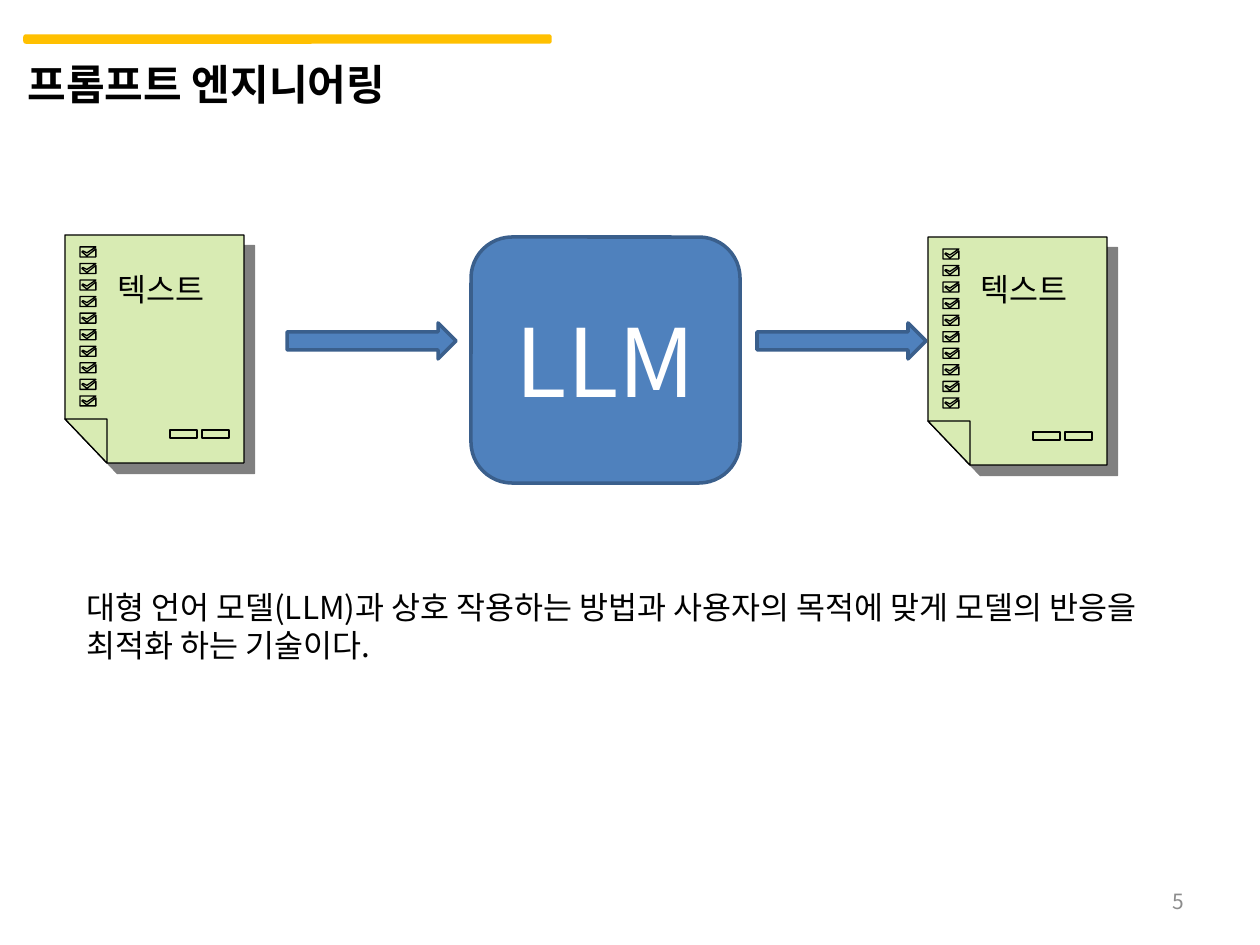
from copy import deepcopy

from lxml import etree
from pptx import Presentation
from pptx.dml.color import RGBColor
from pptx.enum.shapes import MSO_SHAPE
from pptx.enum.text import MSO_ANCHOR, MSO_AUTO_SIZE, PP_ALIGN
from pptx.oxml.ns import qn
from pptx.util import Pt

ROUNDED, ARROW = MSO_SHAPE.ROUNDED_RECTANGLE, MSO_SHAPE.RIGHT_ARROW
TOP, MIDDLE = MSO_ANCHOR.TOP, MSO_ANCHOR.MIDDLE
LEFT, CENTER, RIGHT = PP_ALIGN.LEFT, PP_ALIGN.CENTER, PP_ALIGN.RIGHT

SCALE = 914400 / 126  # EMU per px
FONT = "Noto Sans CJK KR"
BLACK = RGBColor(0x00, 0x00, 0x00)
WHITE = RGBColor(0xFF, 0xFF, 0xFF)
GRAY = RGBColor(0x8C, 0x8C, 0x8C)
GOLD = RGBColor(0xFF, 0xC0, 0x00)
BLUE = RGBColor(0x4F, 0x81, 0xBD)
NAVY = RGBColor(0x3A, 0x5F, 0x8C)
GREEN = RGBColor(0xD8, 0xEB, 0xB3)

# Content: positions are left, top, width, height in px
TITLE = ("프롬프트 엔지니어링", (15, 52, 546, 63))
MODEL = ("LLM", (471, 237, 269, 246))
TEXTS = [
    ("텍스트", (105, 264, 139, 51), {"size": Pt(18)}, LEFT, TOP),
    ("텍스트", (968, 264, 139, 51), {"size": Pt(18)}, LEFT, TOP),
    ("대형 언어 모델(LLM)과 상호 작용하는 방법과 사용자의 목적에 맞게 "
     "모델의 반응을 최적화 하는 기술이다.",
     (74, 582, 1121, 89), {"size": Pt(18)}, LEFT, TOP),
    ("5", (903, 876, 294, 50), {"size": Pt(12), "color": GRAY}, RIGHT, MIDDLE),
]
TITLE_BAR = (25, 36, 525, 6)
ARROWS = [(287, 323, 169, 36), (757, 323, 169, 36)]
DOCUMENTS = [(65, 235), (928, 237)]

# Document outline, relative to its top left corner
SHEET = [(42, 228), (0, 184), (0, 0), (179, 0), (179, 228)]
FOLD = [(0, 184), (42, 184), (42, 228)]
FIELDS = [[(x, 195), (x + 27, 195), (x + 27, 203), (x, 203)] for x in (105, 137)]
CHECK = [(15, 12), (31, 12), (22, 18), (18, 16), (17, 17),
         (22, 21), (31, 14), (31, 22), (15, 22)]
CHECK_COUNT, CHECK_SPAN = 10, 149


def px(*values):
    return [round(value * SCALE) for value in values]


def write(shape, text, style, align, anchor):
    frame = shape.text_frame
    settings = {"word_wrap": True, "auto_size": MSO_AUTO_SIZE.NONE,
                "vertical_anchor": anchor}
    for name, value in settings.items():
        setattr(frame, name, value)
    para = frame.paragraphs[0]
    para.alignment = align
    span = para.add_run()
    span.text = text
    style = {"name": FONT, "color": BLACK, **style}
    span.font.color.rgb = style.pop("color")
    for name, value in style.items():
        setattr(span.font, name, value)
    # Hangul takes the East Asian font
    etree.SubElement(span.font._element, qn("a:ea")).set("typeface", FONT)


def paint(shape, fill, line, width):
    shape.shadow.inherit = False
    shape.fill.solid()
    shape.fill.fore_color.rgb = fill
    shape.line.color.rgb = line
    shape.line.width = Pt(width)


def add_preset(slide, kind, position, fill, line):
    shape = slide.shapes.add_shape(kind, *px(*position))
    paint(shape, fill, line, 2)
    return shape


def add_document(slide, left, top):
    checks = [[(x, y + i * CHECK_SPAN / (CHECK_COUNT - 1)) for x, y in CHECK]
              for i in range(CHECK_COUNT)]
    contours = [SHEET, FOLD, *FIELDS, *checks]
    builder = slide.shapes.build_freeform(*px(*SHEET[0]), scale=1.0)
    for index, contour in enumerate(contours):
        points = [px(*point) for point in contour]
        if index:
            builder.move_to(*points[0])
        builder.add_line_segments(points[1:], close=True)
    shape = builder.convert_to_shape(*px(left, top))
    paint(shape, GREEN, BLACK, 0.75)

    # One path per contour, so that inner parts are filled too
    whole = shape._element.find(".//" + qn("a:path"))
    steps = list(whole)
    for step in steps:
        whole.remove(step)
    blank = deepcopy(whole)
    path_list = whole.getparent()
    path_list.remove(whole)
    for step in steps:
        if step.tag == qn("a:moveTo"):
            part = deepcopy(blank)
            path_list.append(part)
        part.append(step)

    # Hard gray shadow to the lower right
    effects = shape._element.spPr.find(qn("a:effectLst"))
    shadow = etree.SubElement(effects, qn("a:outerShdw"), blurRad="0",
                              dist=str(Pt(8.5)), dir="2700000",
                              algn="ctr", rotWithShape="0")
    etree.SubElement(shadow, qn("a:srgbClr"), val="808080")


def main():
    deck = Presentation()
    deck.slide_width, deck.slide_height = px(1260, 945)
    slide = deck.slides.add_slide(deck.slide_layouts[5])

    # Title and its bar
    add_preset(slide, ROUNDED, TITLE_BAR, GOLD, GOLD)
    text, position = TITLE
    title = slide.shapes.title
    title.left, title.top, title.width, title.height = px(*position)
    write(title, text, {"size": Pt(24), "bold": True}, LEFT, TOP)

    # Flow from text through the model to text
    for corner in DOCUMENTS:
        add_document(slide, *corner)
    text, position = MODEL
    model = add_preset(slide, ROUNDED, position, BLUE, NAVY)
    write(model, text, {"size": Pt(54), "color": WHITE}, CENTER, MIDDLE)
    for position in ARROWS:
        add_preset(slide, ARROW, position, BLUE, NAVY)

    # Labels, definition and page number
    for text, position, style, align, anchor in TEXTS:
        box = slide.shapes.add_textbox(*px(*position))
        write(box, text, style, align, anchor)

    deck.save("out.pptx")


if __name__ == "__main__":
    main()
